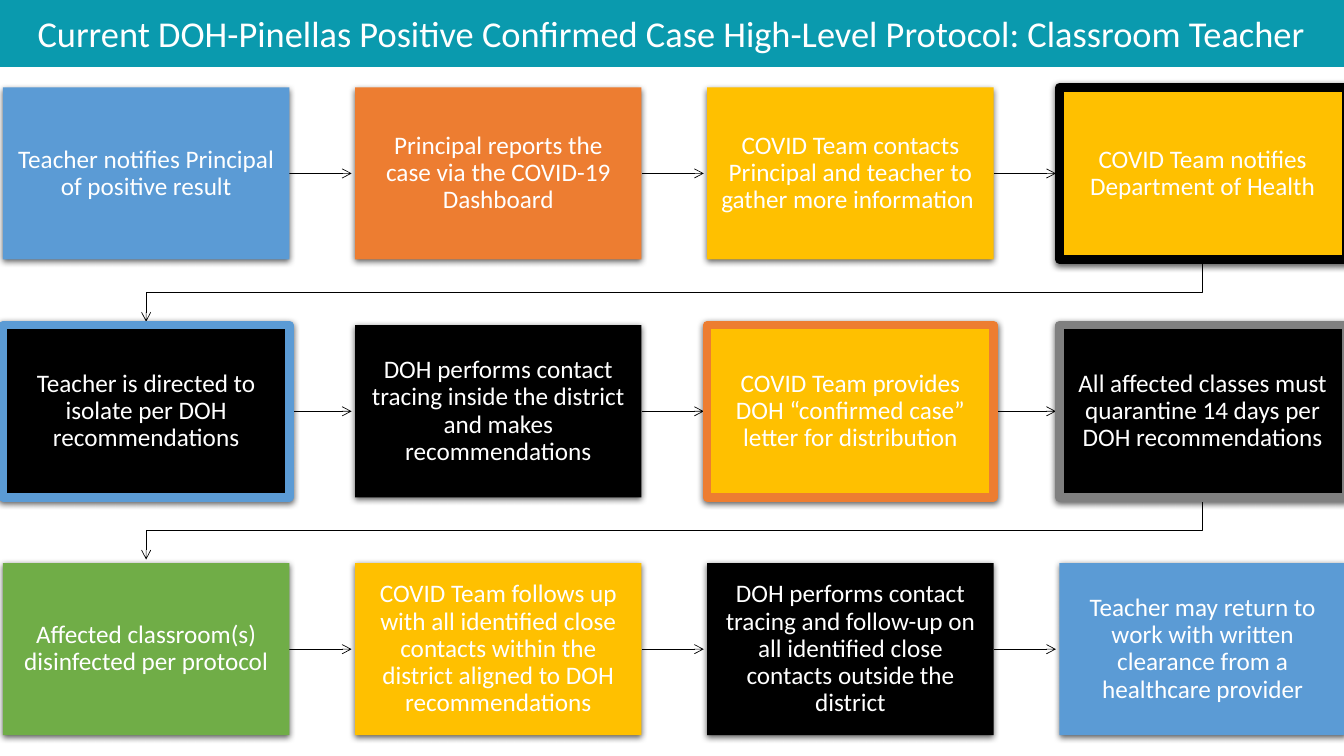
from typing import NamedTuple, Optional

from lxml import etree
from pptx import Presentation, util as u
from pptx.dml.color import RGBColor
from pptx.enum import shapes, text
from pptx.oxml import parse_xml
from pptx.oxml.ns import nsdecls, qn

WHITE = RGBColor(0xFF, 0xFF, 0xFF)
BLACK = RGBColor(0x00, 0x00, 0x00)
TEAL = RGBColor(0x0A, 0x9A, 0xAE)
BLUE = RGBColor(0x5B, 0x9B, 0xD5)
ORANGE = RGBColor(0xED, 0x7D, 0x31)
GOLD = RGBColor(0xFF, 0xC0, 0x00)
GREEN = RGBColor(0x70, 0xAD, 0x47)
GRAY = RGBColor(0x80, 0x80, 0x80)

SLIDE_W, SLIDE_H = 960, 540
COLUMNS = 4
LEFT, TOP = 2.1, 62.4
BOX_W, BOX_H = 204.6, 123
PITCH_X, PITCH_Y = 251.55, 169.9
ARROW_GAP = 2.5  # space between an arrowhead and the next box


class Step(NamedTuple):
    label: str
    fill: RGBColor
    border: Optional[RGBColor] = None


STEPS = [
    Step("Teacher notifies Principal of positive result", BLUE),
    Step("Principal reports the case via the COVID-19 Dashboard", ORANGE),
    Step("COVID Team contacts Principal and teacher to gather more information ", GOLD),
    Step("COVID Team notifies Department of Health", GOLD, BLACK),
    Step("Teacher is directed to isolate per DOH recommendations", BLACK, BLUE),
    Step("DOH performs contact tracing inside the district and makes recommendations", BLACK),
    Step("COVID Team provides DOH “confirmed case” letter for distribution", GOLD, ORANGE),
    Step("All affected classes must quarantine 14 days per DOH recommendations", BLACK, GRAY),
    Step("Affected classroom(s) disinfected per protocol", GREEN),
    Step("COVID Team follows up with all identified close contacts within the district "
         "aligned to DOH recommendations", GOLD),
    Step("DOH performs contact tracing and follow-up on all identified close contacts "
         "outside the district", BLACK),
    Step("Teacher may return to work with written clearance from a healthcare provider", BLUE),
]


def write_text(shape, content: str, *, size: float, color: RGBColor = WHITE,
               font: str = "Calibri", spacing: float = 1.0,
               inset_x: float = 7.2, inset_y: float = 3.6) -> None:
    frame = shape.text_frame
    frame.word_wrap = True
    frame.vertical_anchor = text.MSO_ANCHOR.MIDDLE
    frame.margin_left = frame.margin_right = u.Pt(inset_x)
    frame.margin_top = frame.margin_bottom = u.Pt(inset_y)
    paragraph = frame.paragraphs[0]
    paragraph.alignment = text.PP_ALIGN.CENTER
    paragraph.line_spacing = spacing
    run = paragraph.add_run()
    run.text = content
    run.font.name = font
    run.font.size = u.Pt(size)
    run.font.color.rgb = color


def add_box(slide, left: float, top: float, width: float, height: float,
            fill: RGBColor, border: Optional[RGBColor] = None, border_width: float = 1):
    box = slide.shapes.add_shape(shapes.MSO_SHAPE.RECTANGLE,
                                 u.Pt(left), u.Pt(top), u.Pt(width), u.Pt(height))
    box.shadow.inherit = False
    box.fill.solid()
    box.fill.fore_color.rgb = fill
    if border is None:
        box.line.fill.background()
    else:
        box.line.color.rgb = border
        box.line.width = u.Pt(border_width)
    return box


def cast_shadow(shape) -> None:
    """Give the shape a soft black shadow straight below it."""
    effects = shape._element.spPr.find(qn("a:effectLst"))
    effects.append(parse_xml(
        f'<a:outerShdw {nsdecls("a")} blurRad="{u.Pt(4.5)}" dist="{u.Pt(1.5)}" '
        'dir="5400000" algn="ctr" rotWithShape="0">'
        '<a:srgbClr val="000000"><a:alpha val="63000"/></a:srgbClr></a:outerShdw>'))


def style_arrow(arrow) -> None:
    """Make the line thin and black, with an open head at its end and no shadow."""
    arrow.line.color.rgb = BLACK
    arrow.line.width = u.Pt(0.5)
    properties = arrow._element.spPr
    etree.SubElement(properties.find(qn("a:ln")), qn("a:tailEnd"), type="arrow")
    if properties.find(qn("a:effectLst")) is None:
        etree.SubElement(properties, qn("a:effectLst"))


def add_next_column_arrow(slide, left: float, top: float) -> None:
    middle = u.Pt(top + BOX_H / 2)
    style_arrow(slide.shapes.add_connector(
        shapes.MSO_CONNECTOR.STRAIGHT, u.Pt(left + BOX_W), middle,
        u.Pt(left + PITCH_X - ARROW_GAP), middle))


def add_next_row_arrow(slide, left: float, top: float) -> None:
    """Lead from the last box of a row down to the first box of the next row."""
    start_x, start_y = left + BOX_W / 2, top + BOX_H
    end_x, end_y = LEFT + BOX_W / 2, top + PITCH_Y - ARROW_GAP
    bend_y = (top + BOX_H + top + PITCH_Y) / 2
    bends = [(start_x, bend_y), (end_x, bend_y), (end_x, end_y)]
    builder = slide.shapes.build_freeform(u.Pt(start_x), u.Pt(start_y))
    builder.add_line_segments([(u.Pt(x), u.Pt(y)) for x, y in bends], close=False)
    arrow = builder.convert_to_shape()
    arrow.shadow.inherit = False
    arrow.fill.background()
    style_arrow(arrow)


def add_step(slide, index: int, step: Step) -> None:
    row, column = divmod(index, COLUMNS)
    left, top = LEFT + column * PITCH_X, TOP + row * PITCH_Y
    if column < COLUMNS - 1:
        add_next_column_arrow(slide, left, top)
    elif index < len(STEPS) - 1:
        add_next_row_arrow(slide, left, top)
    box = add_box(slide, left, top, BOX_W, BOX_H, step.fill, step.border, border_width=6)
    cast_shadow(box)
    write_text(box, step.label, size=18, spacing=0.9, inset_x=10, inset_y=10)


def main() -> None:
    deck = Presentation()
    deck.slide_width, deck.slide_height = u.Pt(SLIDE_W), u.Pt(SLIDE_H)
    slide = deck.slides.add_slide(deck.slide_layouts[6])
    for index, step in enumerate(STEPS):
        add_step(slide, index, step)
    title = add_box(slide, 0, 0, SLIDE_W, 47.5, TEAL, TEAL)
    write_text(title, "Current DOH-Pinellas Positive Confirmed Case High-Level Protocol: "
                      "Classroom Teacher", size=26)
    deck.save("out.pptx")


if __name__ == "__main__":
    main()
